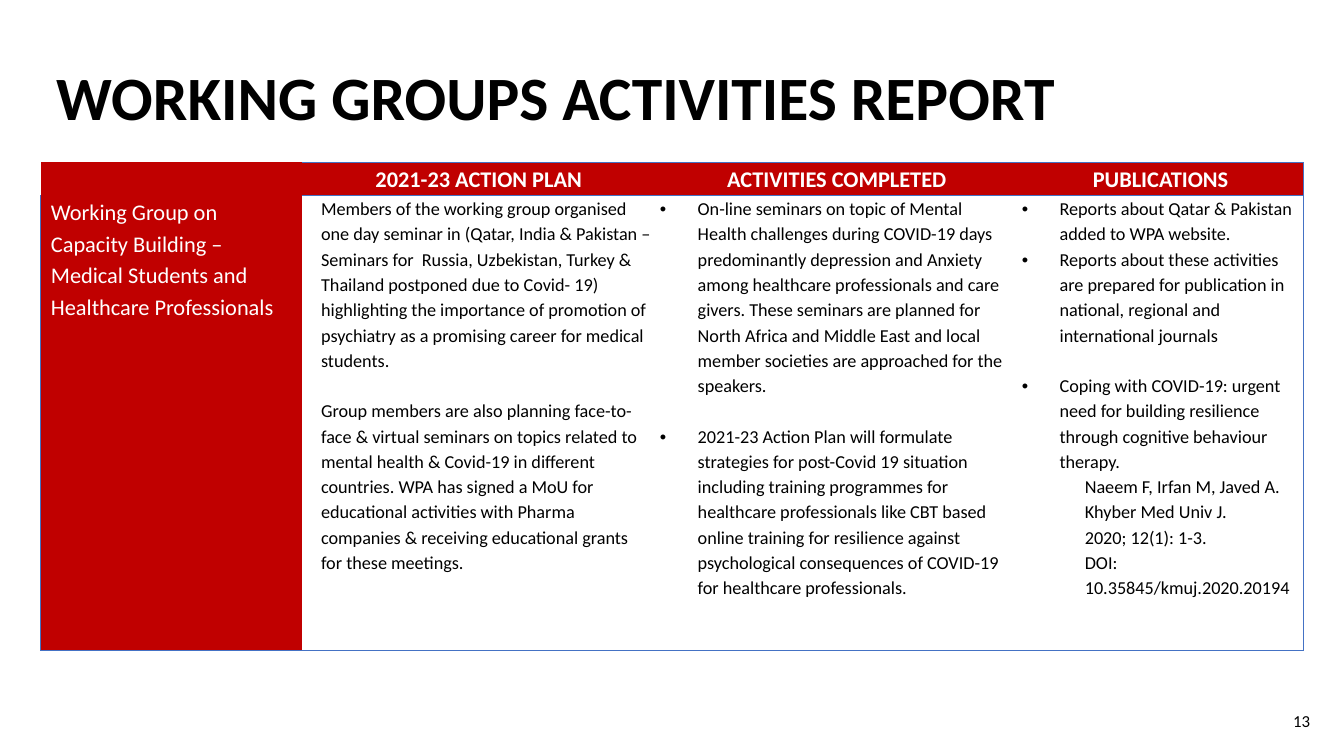
from dataclasses import dataclass

from lxml import etree
from pptx import Presentation
from pptx import util as u
from pptx.dml import color
from pptx.enum import text
from pptx.oxml import ns

Pt = u.Pt


@dataclass(frozen=True)
class Theme:
    font: str = "Calibri"
    black: str = "000000"
    white: str = "FFFFFF"
    red: str = "C00000"
    blue: str = "4472C4"
    title: int = 44
    heading: int = 16
    body: int = 13
    number: int = 12
    border: float = 0.5


@dataclass(frozen=True)
class Line:
    words: str
    indent: float = 0
    bullet: bool = False
    gap: float = 0


THEME = Theme()
PLAN_INDENT, BULLET_INDENT, CITATION_INDENT, BLANK_LINE = 11, 27, 45, 18

HEADINGS = ["", "2021-23 ACTION PLAN", "ACTIVITIES COMPLETED", "PUBLICATIONS"]
GROUP = [
    Line("Working Group on", 4.5),
    Line("Capacity Building – Medical Students and Healthcare Professionals", 4.5),
]
PLAN = [
    Line("Members of the working group organised one day seminar in (Qatar, India & Pakistan – "
         "Seminars for  Russia, Uzbekistan, Turkey & Thailand postponed due to Covid- 19) "
         "highlighting the importance of promotion of psychiatry as a promising career for "
         "medical students.", PLAN_INDENT),
    Line("Group members are also planning face-to-face & virtual seminars on topics related to "
         "mental health & Covid-19 in different countries. WPA has signed a MoU for educational "
         "activities with Pharma companies & receiving educational grants for these meetings.",
         PLAN_INDENT, gap=BLANK_LINE),
]
COMPLETED = [
    Line("On-line seminars on topic of Mental Health challenges during COVID-19 days "
         "predominantly depression and Anxiety among healthcare professionals and care givers. "
         "These seminars are planned for North Africa and Middle East and local member "
         "societies are approached for the speakers.", BULLET_INDENT, True),
    Line("2021-23 Action Plan will formulate strategies for post-Covid 19 situation including "
         "training programmes for healthcare professionals like CBT based online training for "
         "resilience against psychological consequences of COVID-19 for healthcare "
         "professionals.", BULLET_INDENT, True, BLANK_LINE),
]
CITATION = ["Naeem F, Irfan M, Javed A.", "Khyber Med Univ J.", "2020; 12(1): 1-3.",
            "DOI:", "10.35845/kmuj.2020.20194"]
PUBLICATIONS = [
    Line("Reports about Qatar & Pakistan added to WPA website.", BULLET_INDENT, True),
    Line("Reports about these activities are prepared for publication in national, regional "
         "and international journals", BULLET_INDENT, True),
    Line("Coping with COVID-19: urgent need for building resilience through cognitive "
         "behaviour therapy.", BULLET_INDENT, True, BLANK_LINE),
] + [Line(words, CITATION_INDENT) for words in CITATION]


def style_font(para, size, tint, bold=False):
    font = para.font
    font.name, font.size, font.bold = THEME.font, Pt(size), bold
    font.color.rgb = color.RGBColor.from_string(tint)


def set_indent(para, line):
    props = para._p.get_or_add_pPr()
    props.set("marL", str(Pt(line.indent)))
    props.set("indent", str(-Pt(line.indent) if line.bullet else 0))
    if line.bullet:
        etree.SubElement(props, ns.qn("a:buFont"), typeface="Arial")
        etree.SubElement(props, ns.qn("a:buChar"), char="•")


def write_lines(frame, lines, size, tint, spacing, bold=False, align=text.PP_ALIGN.LEFT):
    for index, line in enumerate(lines):
        para = frame.paragraphs[0] if index == 0 else frame.add_paragraph()
        para.text = line.words
        set_indent(para, line)
        para.alignment = align
        para.line_spacing = spacing
        para.space_before = Pt(line.gap)
        style_font(para, size, tint, bold)


def set_borders(cell, sides):
    props = cell._tc.get_or_add_tcPr()
    for index, side in enumerate("LRTB"):
        edge = etree.Element(ns.qn(f"a:ln{side}"), w=str(Pt(THEME.border)))
        if side in sides:
            fill = etree.SubElement(edge, ns.qn("a:solidFill"))
            etree.SubElement(fill, ns.qn("a:srgbClr"), val=THEME.blue)
        else:
            etree.SubElement(edge, ns.qn("a:noFill"))
        props.insert(index, edge)


def style_cell(cell, fill, sides):
    cell.margin_left = cell.margin_right = Pt(2.9)
    cell.margin_top = cell.margin_bottom = 0
    if fill:
        cell.fill.solid()
        cell.fill.fore_color.rgb = color.RGBColor.from_string(fill)
    else:
        cell.fill.background()
    set_borders(cell, sides)


def add_label(page, box, words, size, align, spacing=1, bold=False):
    frame = page.shapes.add_textbox(*map(Pt, box)).text_frame
    frame.word_wrap = True
    frame.vertical_anchor = text.MSO_ANCHOR.MIDDLE
    write_lines(frame, [Line(words)], size, THEME.black, spacing, bold, align)


def add_report(page, box, widths, heights):
    table = page.shapes.add_table(2, len(widths), *map(Pt, box)).table
    table.first_row = table.horz_banding = False
    for column, width in zip(table.columns, widths):
        column.width = Pt(width)
    for row, height in zip(table.rows, heights):
        row.height = Pt(height)

    for index, (heading, sides) in enumerate(zip(HEADINGS, ["", "T", "T", "TR"])):
        cell = table.cell(0, index)
        write_lines(cell.text_frame, [Line(heading)], THEME.heading, THEME.white, 1.15,
                    True, text.PP_ALIGN.CENTER)
        style_cell(cell, THEME.red, sides)

    group = table.cell(1, 0)
    write_lines(group.text_frame, GROUP, THEME.heading, THEME.white, 1.15)
    style_cell(group, THEME.red, "LB")

    bodies = zip([PLAN, COMPLETED, PUBLICATIONS], ["TB", "TB", "TRB"])
    for index, (lines, sides) in enumerate(bodies, 1):
        cell = table.cell(1, index)
        write_lines(cell.text_frame, lines, THEME.body, THEME.black, 1.14)
        style_cell(cell, None, sides)


def main():
    deck = Presentation()
    deck.slide_width, deck.slide_height = Pt(960), Pt(540)
    page = deck.slides.add_slide(deck.slide_layouts[6])
    add_label(page, (33, 38, 902, 68), "WORKING GROUPS ACTIVITIES REPORT",
              THEME.title, text.PP_ALIGN.LEFT, 0.9, True)
    widths, heights = [186.5, 253, 258.5, 204], [23.5, 325]
    add_report(page, (29, 116, sum(widths), sum(heights)), widths, heights)
    add_label(page, (901, 500.5, 42, 29), "13", THEME.number, text.PP_ALIGN.RIGHT)
    deck.save("out.pptx")


if __name__ == "__main__":
    main()
